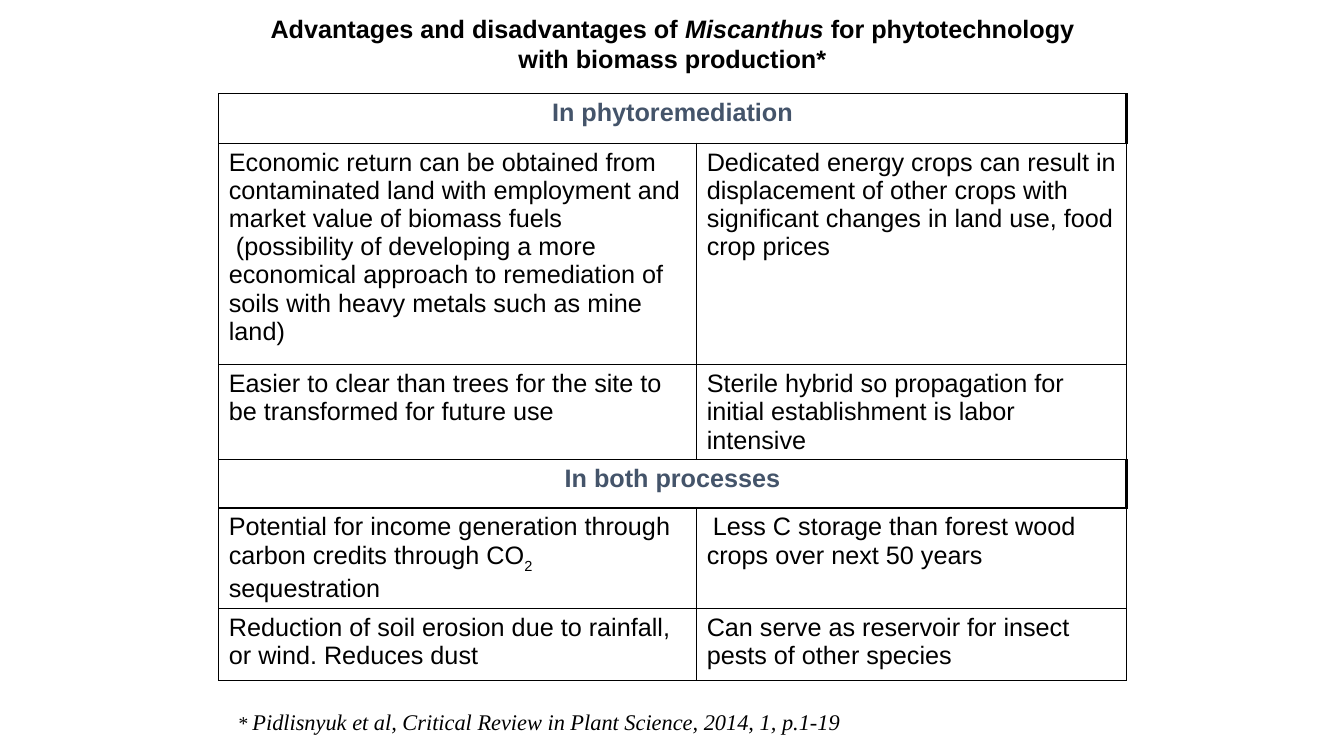
import dataclasses
import typing

import lxml.etree
import pptx
import pptx.dml.color
import pptx.enum.text
import pptx.oxml.ns
import pptx.util

Inches = pptx.util.Inches
Pt = pptx.util.Pt
COLORS = {"ink": "000000", "heading": "44546A", "paper": "FFFFFF"}
CENTER = pptx.enum.text.PP_ALIGN.CENTER
LEFT = pptx.enum.text.PP_ALIGN.LEFT


@dataclasses.dataclass(frozen=True)
class Span:
    text: str
    size: float = 18
    font: str = "Arial"
    color: str = "ink"
    bold: bool = False
    italic: bool = False
    subscript: bool = False


@dataclasses.dataclass(frozen=True)
class Para:
    spans: tuple[Span, ...]
    centered: bool = False
    indent: float = 0


@dataclasses.dataclass(frozen=True)
class TableRow:
    height: float
    cells: tuple[tuple[Para, ...], ...]


def plain(text: str, indent: float = 0) -> Para:
    return Para((Span(text),), indent=indent)


def heading(text: str) -> tuple[Para, ...]:
    return (Para((Span(text, color="heading", bold=True),), centered=True),)


TITLE = (
    Para((
        Span("Advantages and disadvantages of ", bold=True),
        Span("Miscanthus ", bold=True, italic=True),
        Span("for phytotechnology", bold=True),
    ), centered=True),
    Para((Span("with biomass production*", bold=True),), centered=True),
)
SOURCE = (
    Para((
        Span("* ", 14, "Times New Roman", italic=True),
        Span("Pidlisnyuk et al, Critical Review in Plant Science, 2014, 1, p.1-19",
             16, "Times New Roman", italic=True),
    )),
)
COLUMN_WIDTHS = (4.74, 4.26)
ROWS = (
    TableRow(0.49, (heading("In phytoremediation"),)),
    TableRow(2.2, (
        (
            plain("Economic return can be obtained from contaminated land with "
                  "employment and market value of biomass fuels"),
            plain("(possibility of developing a more economical approach to "
                  "remediation of soils with heavy metals such as mine land)", 0.07),
        ),
        (plain("Dedicated energy crops can result in displacement of other crops "
               "with significant changes in land use, food crop prices"),),
    )),
    TableRow(0.94, (
        (plain("Easier to clear than trees for the site to be transformed for future use"),),
        (plain("Sterile hybrid so propagation for initial establishment is labor intensive"),),
    )),
    TableRow(0.48, (heading("In both processes"),)),
    TableRow(1, (
        (Para((
            Span("Potential for income generation through carbon credits through CO"),
            Span("2", subscript=True),
            Span(" sequestration"),
        )),),
        (plain("Less C storage than forest wood crops over next 50 years", 0.06),),
    )),
    TableRow(0.71, (
        (plain("Reduction of soil erosion due to rainfall, or wind. Reduces dust"),),
        (plain("Can serve as reservoir for insect pests of other species"),),
    )),
)


def rgb(name: str) -> pptx.dml.color.RGBColor:
    return pptx.dml.color.RGBColor.from_string(COLORS[name])


def write_paragraphs(frame: typing.Any, paras: tuple[Para, ...]) -> None:
    for index, para in enumerate(paras):
        paragraph = frame.add_paragraph() if index else frame.paragraphs[0]
        paragraph.alignment = CENTER if para.centered else LEFT
        if para.indent:
            paragraph._p.get_or_add_pPr().set("indent", str(Inches(para.indent)))
        for span in para.spans:
            run = paragraph.add_run()
            run.text = span.text
            run.font.size = Pt(span.size)
            run.font.name = span.font
            run.font.bold = span.bold
            run.font.italic = span.italic
            run.font.color.rgb = rgb(span.color)
            if span.subscript:
                run._r.get_or_add_rPr().set("baseline", "-30000")


def style_cell(cell: typing.Any, right_width: float) -> None:
    qn = pptx.oxml.ns.qn
    properties = cell._tc.get_or_add_tcPr()
    for side, width in (("L", 1), ("R", right_width), ("T", 1), ("B", 1)):
        line = lxml.etree.SubElement(properties, qn(f"a:ln{side}"), w=str(Pt(width)))
        fill = lxml.etree.SubElement(line, qn("a:solidFill"))
        lxml.etree.SubElement(fill, qn("a:srgbClr"), val=COLORS["ink"])
    cell.fill.solid()
    cell.fill.fore_color.rgb = rgb("paper")


def add_comparison_table(page: typing.Any) -> None:
    table = page.shapes.add_table(
        len(ROWS), len(COLUMN_WIDTHS), Inches(2.17), Inches(0.93),
        Inches(sum(COLUMN_WIDTHS)), Inches(sum(row.height for row in ROWS)),
    ).table
    table.first_row = False
    table.horz_banding = False
    for column, width in zip(table.columns, COLUMN_WIDTHS):
        column.width = Inches(width)
    for row_index, row in enumerate(ROWS):
        table.rows[row_index].height = Inches(row.height)
        is_heading = len(row.cells) == 1
        for column_index in range(len(COLUMN_WIDTHS)):
            style_cell(table.cell(row_index, column_index), 2.25 if is_heading else 1)
        if is_heading:
            table.cell(row_index, 0).merge(table.cell(row_index, 1))
        for column_index, paras in enumerate(row.cells):
            write_paragraphs(table.cell(row_index, column_index).text_frame, paras)


def add_text(page: typing.Any, left: float, top: float, width: float, height: float,
             paras: tuple[Para, ...]) -> None:
    box = page.shapes.add_textbox(Inches(left), Inches(top), Inches(width), Inches(height))
    box.text_frame.word_wrap = True
    write_paragraphs(box.text_frame, paras)


def main() -> None:
    deck = pptx.Presentation()
    deck.slide_width = Inches(13.33)
    deck.slide_height = Inches(7.5)
    page = deck.slides.add_slide(deck.slide_layouts[6])
    add_comparison_table(page)
    add_text(page, 1.67, 0.08, 10, 1.48, TITLE)
    add_text(page, 2.26, 6.98, 6.23, 0.37, SOURCE)
    deck.save("out.pptx")


if __name__ == "__main__":
    main()
